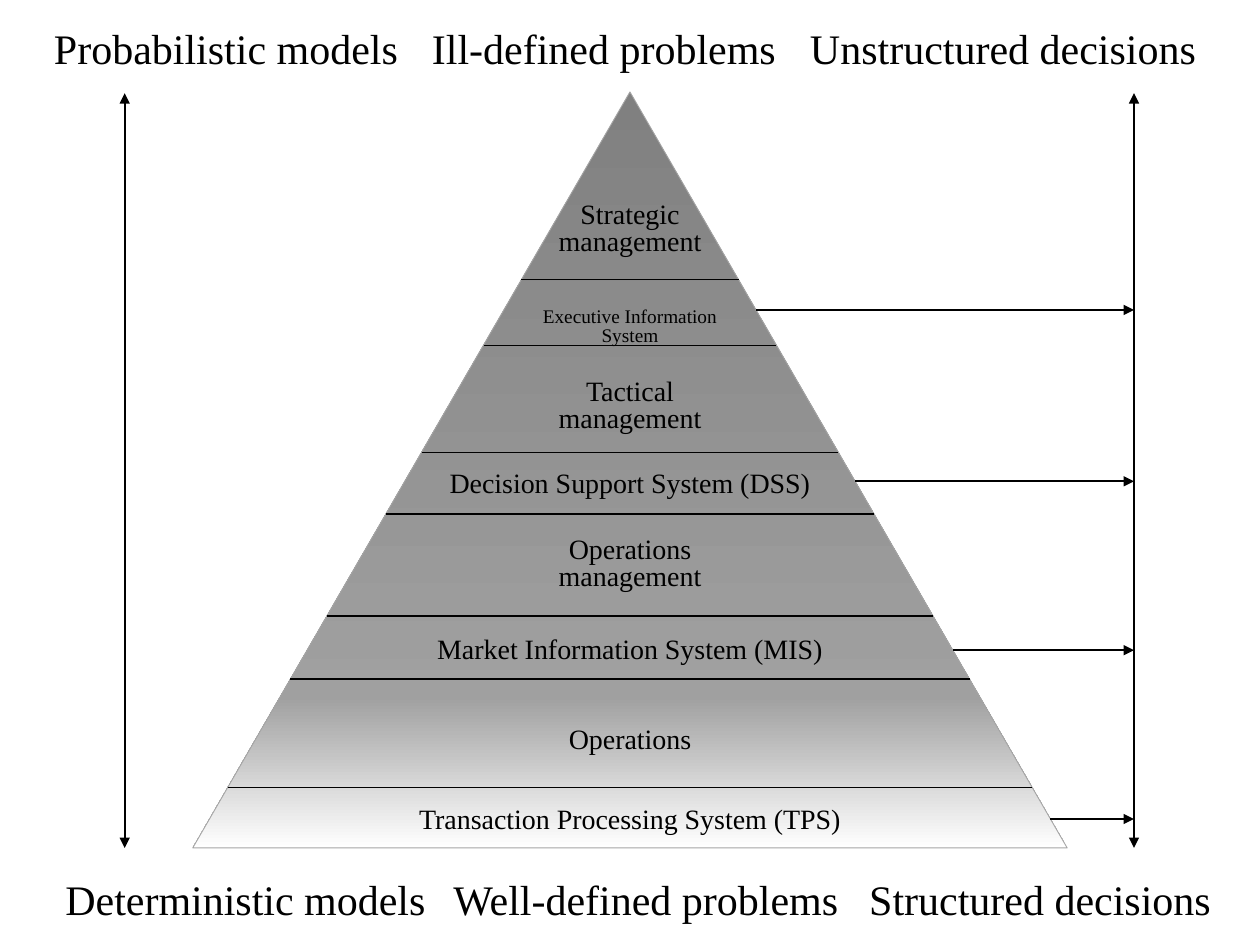
from copy import deepcopy
from dataclasses import dataclass

from pptx import Presentation
from pptx.dml.color import RGBColor as RGB
from pptx.enum.shapes import MSO_CONNECTOR as LineKind, MSO_SHAPE as Preset
from pptx.enum.text import MSO_ANCHOR as Anchor, PP_ALIGN as Align
from pptx.oxml.ns import qn
from pptx.util import Inches, Pt
from lxml.etree import SubElement


@dataclass(frozen=True)
class Theme:
    font: str = "Times New Roman"
    ink: RGB = RGB(0, 0, 0)
    edge: RGB = RGB(0xA5, 0xA5, 0xA5)
    shades: tuple = ((0, "808080"), (0.8, "A0A0A0"), (1, "FFFFFF"))
    heading: int = 24
    label: int = 16
    small: int = 11
    tight: float = 0.8
    arrow: float = 1
    divider: float = 0.75
    outline: float = 0.5


class PyramidSlide:
    CENTER, APEX, WIDTH, HEIGHT = 5, 0.73, 6.94, 6

    def __init__(self, slide, theme):
        self.shapes = slide.shapes
        self.theme = theme

    def half_width(self, y):
        return self.WIDTH / 2 * (y - self.APEX) / self.HEIGHT

    def pyramid(self):
        triangle = self.shapes.add_shape(
            Preset.ISOSCELES_TRIANGLE, Inches(self.CENTER - self.WIDTH / 2),
            Inches(self.APEX), Inches(self.WIDTH), Inches(self.HEIGHT))
        triangle.shadow.inherit = False
        triangle.line.color.rgb = self.theme.edge
        triangle.line.width = Pt(self.theme.outline)
        fill = triangle.fill
        fill.gradient()
        fill.gradient_angle = 270
        # A default gradient has two stops; add the third
        stops = triangle._element.spPr.find(qn("a:gradFill")).find(qn("a:gsLst"))
        stops.append(deepcopy(stops[-1]))
        for stop, (position, shade) in zip(fill.gradient_stops, self.theme.shades):
            stop.position = position
            stop.color.rgb = RGB.from_string(shade)

    def set_text(self, shape, lines, size, align, spacing=None, wrap=False):
        frame = shape.text_frame
        frame.word_wrap = wrap
        frame.vertical_anchor = Anchor.TOP
        frame.text = "\n".join(lines)
        for paragraph in frame.paragraphs:
            paragraph.alignment = align
            paragraph.line_spacing = spacing
            paragraph.font.name = self.theme.font
            paragraph.font.size = Pt(size)
            paragraph.font.color.rgb = self.theme.ink
        return frame

    def heading(self, left, top, width, phrases, tabs):
        box = self.shapes.add_textbox(
            Inches(left), Inches(top), Inches(width), Inches(0.51))
        frame = self.set_text(box, ["\t".join(phrases)], self.theme.heading,
                              Align.LEFT, wrap=True)
        properties = frame.paragraphs[0]._p.get_or_add_pPr()
        tab_list = SubElement(properties, qn("a:tabLst"))
        for tab in tabs:
            SubElement(tab_list, qn("a:tab"), pos=str(Inches(tab)), algn="l")
        # Tab stops come before the font in the paragraph properties
        properties.find(qn("a:defRPr")).addprevious(tab_list)

    def level(self, top, *lines):
        width, height = 1.35, 0.11 + 0.21 * len(lines)
        box = self.shapes.add_textbox(
            Inches(self.CENTER - width / 2), Inches(top),
            Inches(width), Inches(height))
        self.set_text(box, lines, self.theme.label, Align.CENTER,
                      self.theme.tight)

    def system(self, top, width, height, name, size, wrap=False):
        band = self.shapes.add_shape(
            Preset.FLOWCHART_TERMINATOR, Inches(self.CENTER - width / 2),
            Inches(top), Inches(width), Inches(height))
        band.shadow.inherit = False
        band.fill.background()
        band.line.fill.background()
        frame = self.set_text(band, [name], size, Align.CENTER,
                              self.theme.tight, wrap)
        if wrap:
            frame.margin_left = frame.margin_right = Inches(0.25)

    def line(self, start, end, weight, head=False, tail=False):
        connector = self.shapes.add_connector(
            LineKind.STRAIGHT, *(Inches(v) for v in (*start, *end)))
        connector.line.color.rgb = self.theme.ink
        connector.line.width = Pt(weight)
        outline = connector._element.spPr.find(qn("a:ln"))
        for tag, wanted in (("a:headEnd", head), ("a:tailEnd", tail)):
            if wanted:
                SubElement(outline, qn(tag), type="triangle")
        SubElement(connector._element.spPr, qn("a:effectLst"))

    def divider(self, y):
        half = self.half_width(y)
        self.line((self.CENTER - half, y), (self.CENTER + half, y),
                  self.theme.divider)

    def scale(self, x):
        self.line((x, self.APEX + self.HEIGHT), (x, self.APEX + 0.01),
                  self.theme.arrow, head=True, tail=True)

    def pointer(self, y, target):
        self.line((self.CENTER + self.half_width(y), y), (target, y),
                  self.theme.arrow, tail=True)


def main():
    deck = Presentation()
    deck.slide_width, deck.slide_height = Inches(10), Inches(7.5)
    theme = Theme()
    page = PyramidSlide(deck.slides.add_slide(deck.slide_layouts[6]), theme)

    page.pyramid()

    # Headings above and below the pyramid
    page.heading(0.33, 0.13, 9.35, (
        "Probabilistic models", "Ill-defined problems",
        "Unstructured decisions"), (3, 6))
    page.heading(0.42, 6.88, 9.38, (
        "Deterministic models", "Well-defined problems",
        "Structured decisions"), (3.08, 6.38))

    # Management levels
    page.level(1.56, "Strategic", "management")
    page.level(2.97, "Tactical", "management")
    page.level(4.22, "Operations", "management")
    page.level(5.73, "Operations")

    # Information systems
    page.system(2.35, 2.28, 0.35, "Executive Information System",
                theme.small, wrap=True)
    for top, width, name in (
            (3.63, 3.41, "Decision Support System (DSS)"),
            (4.95, 3.63, "Market Information System (MIS)"),
            (6.3, 3.95, "Transaction Processing System (TPS)")):
        page.system(top, width, 0.44, name, theme.label)

    # Dividers between the bands
    for y in (2.22, 2.74, 3.59, 4.08, 4.89, 5.39, 6.25):
        page.divider(y)

    # Side scales, and pointers from the systems to the right one
    left_scale, right_scale = 0.99, 9
    page.scale(left_scale)
    page.scale(right_scale)
    for y in (2.46, 3.82, 5.16, 6.5):
        page.pointer(y, right_scale)

    deck.save("out.pptx")


if __name__ == "__main__":
    main()
